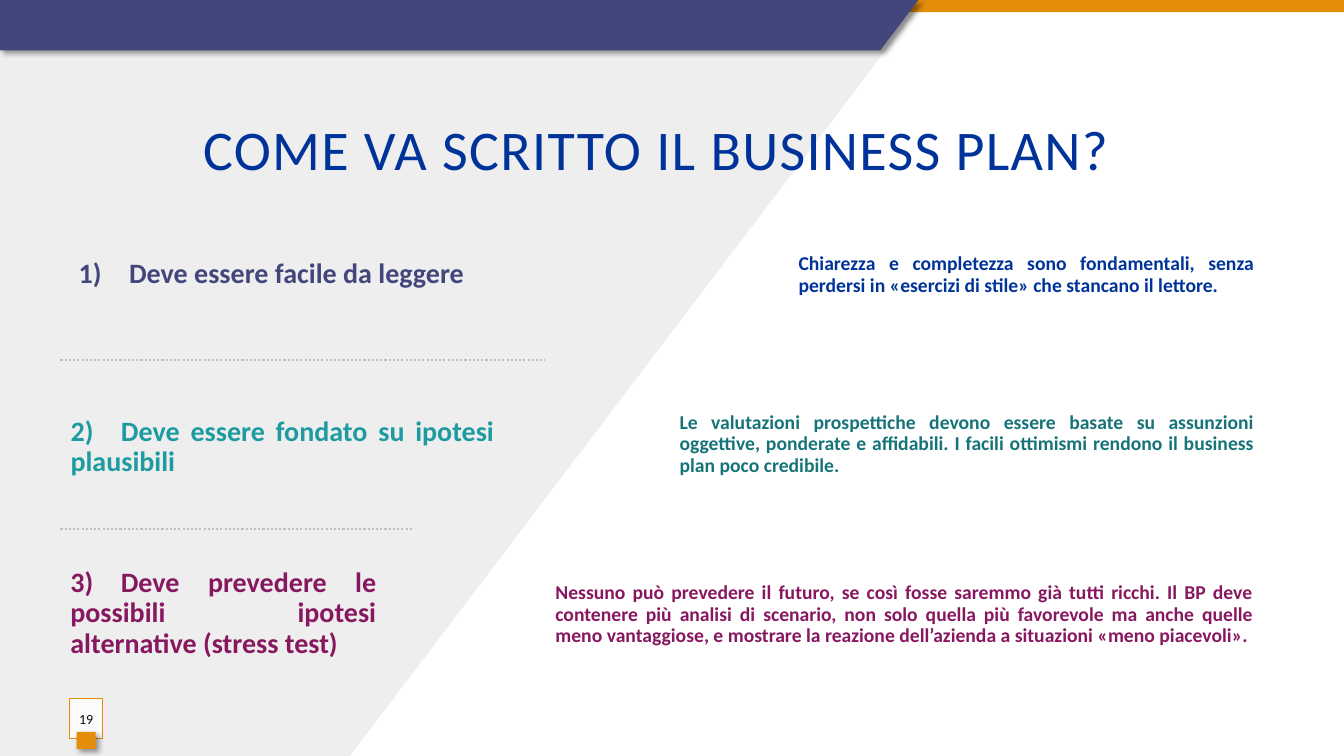
from lxml.etree import SubElement
from pptx import Presentation
from pptx.dml.color import RGBColor
from pptx.enum.dml import MSO_LINE
from pptx.enum.shapes import MSO_CONNECTOR, MSO_SHAPE
from pptx.enum.text import MSO_ANCHOR, MSO_AUTO_SIZE, PP_ALIGN
from pptx.oxml.ns import qn
from pptx.util import Pt

PX = 9144  # 100 px to the inch
FONT = "Calibri"
WHITE = RGBColor(0xFF, 0xFF, 0xFF)
PALE_GREY = RGBColor(0xEE, 0xEE, 0xEE)
DOT_GREY = RGBColor(0xBF, 0xBF, 0xBF)
INK = RGBColor(0x0D, 0x0D, 0x0D)
ORANGE = RGBColor(0xE5, 0x8C, 0x09)
INDIGO = RGBColor(0x43, 0x46, 0x7B)
BLUE = RGBColor(0x00, 0x33, 0x99)
TEAL = RGBColor(0x1D, 0x9B, 0xA1)
DARK_TEAL = RGBColor(0x16, 0x74, 0x79)
PLUM = RGBColor(0x87, 0x17, 0x5F)


def paint(shape, color, shadow=False):
    shape.fill.solid()
    shape.fill.fore_color.rgb = color
    shape.line.fill.background()
    shape.shadow.inherit = False
    if shadow:
        effects = shape._element.spPr.find(qn("a:effectLst"))
        outer = SubElement(effects, qn("a:outerShdw"), blurRad=str(Pt(4)),
                           dist=str(Pt(3)), dir="2700000", algn="tl", rotWithShape="0")
        black = SubElement(outer, qn("a:srgbClr"), val="000000")
        SubElement(black, qn("a:alpha"), val="40000")


def place(shape, left, top, width, height):
    shape.left, shape.top = left * PX, top * PX
    shape.width, shape.height = width * PX, height * PX


deck = Presentation()
deck.slide_width, deck.slide_height = 1333 * PX, 750 * PX
page = deck.slides.add_slide(deck.slide_layouts.get_by_name("Comparison"))
shapes = page.shapes
title, *bodies = page.placeholders

# Background: grey slope, orange strip, indigo banner
slope = shapes.build_freeform(0, 0, scale=PX)
slope.add_line_segments([(911, 0), (911, 7), (347, 750), (0, 750)])
paint(slope.convert_to_shape(), PALE_GREY)
strip = shapes.add_shape(MSO_SHAPE.RECTANGLE, 0, 0, 1333 * PX, 12 * PX)
paint(strip, ORANGE)
banner = shapes.build_freeform(0, 0, scale=PX)
banner.add_line_segments([(911, 0), (873, 50), (0, 50)])
paint(banner.convert_to_shape(), INDIGO, shadow=True)

# Bring the placeholders in front of the background
for holder in [title, *bodies]:
    shapes._spTree.append(holder._element)

# Title
place(title, 60, 108, 1182, 77)
frame = title.text_frame
frame.text = "COME VA SCRITTO IL BUSINESS PLAN?"
frame.auto_size = MSO_AUTO_SIZE.NONE
frame.vertical_anchor = MSO_ANCHOR.MIDDLE
frame.paragraphs[0].alignment = PP_ALIGN.CENTER
span = frame.paragraphs[0].runs[0]
span.font.name, span.font.size = FONT, Pt(40)
span.font.color.rgb = BLUE
span.font._element.set("spc", "100")

# Three points, each a heading and its explanation
texts = [
    ("1)\tDeve essere facile da leggere", (68, 249, 540, 46), 20, INDIGO),
    ("Chiarezza e completezza sono fondamentali, senza perdersi in «esercizi di stile» "
     "che stancano il lettore.", (782, 223, 472, 100), 14, BLUE),
    ("2)\tDeve essere fondato su ipotesi plausibili", (60, 421, 440, 46), 20, TEAL),
    ("Le valutazioni prospettiche devono essere basate su assunzioni oggettive, ponderate "
     "e affidabili. I facili ottimismi rendono il business plan poco credibile.",
     (664, 391, 590, 100), 14, DARK_TEAL),
    ("3)\tDeve prevedere le possibili ipotesi alternative (stress test)",
     (60, 586, 323, 46), 20, PLUM),
    ("Nessuno può prevedere il futuro, se così fosse saremmo già tutti ricchi. Il BP deve "
     "contenere più analisi di scenario, non solo quella più favorevole ma anche quelle "
     "meno vantaggiose, e mostrare la reazione dell’azienda a situazioni «meno piacevoli».",
     (541, 560, 712, 100), 14, PLUM),
]
while len(bodies) < len(texts):
    bodies.append(shapes.add_textbox(0, 0, PX, PX))
for box, (text, area, size, color) in zip(bodies, texts):
    place(box, *area)
    frame = box.text_frame
    frame.text = text
    frame.word_wrap = True
    frame.auto_size = MSO_AUTO_SIZE.NONE
    frame.vertical_anchor = MSO_ANCHOR.MIDDLE
    para = frame.paragraphs[0]
    para.alignment = PP_ALIGN.JUSTIFY
    para.line_spacing = 0.9
    para.space_before, para.space_after = Pt(12), Pt(2)
    props = para._p.get_or_add_pPr()
    props.set("marL", "0")
    props.set("indent", "0")
    SubElement(props, qn("a:buNone"))
    tabs = SubElement(props, qn("a:tabLst"))
    SubElement(tabs, qn("a:tab"), pos=str(100 * PX), algn="l")
    for span in para.runs:
        span.font.name, span.font.size, span.font.bold = FONT, Pt(size), True
        span.font.color.rgb = color

# Page number with its orange tab
number = shapes.add_shape(MSO_SHAPE.RECTANGLE, 69 * PX, 693 * PX, 33 * PX, 40 * PX)
paint(number, WHITE)
SubElement(number._element.spPr.find(".//" + qn("a:srgbClr")), qn("a:alpha"), val="82000")
number.line.color.rgb = ORANGE
number.line.width = Pt(0.75)
frame = number.text_frame
frame.text = "19"
frame.margin_left = frame.margin_right = 0
frame.vertical_anchor = MSO_ANCHOR.MIDDLE
frame.paragraphs[0].alignment = PP_ALIGN.CENTER
span = frame.paragraphs[0].runs[0]
span.font.name, span.font.size = FONT, Pt(10)
span.font.color.rgb = INK
tab = shapes.add_shape(MSO_SHAPE.RECTANGLE, 76 * PX, 726 * PX, 19 * PX, 17 * PX)
paint(tab, ORANGE, shadow=True)

# Dotted dividers
for right, y in [(540, 357), (410, 525)]:
    divider = shapes.add_connector(MSO_CONNECTOR.STRAIGHT, 60 * PX, y * PX, right * PX, y * PX)
    divider.line.color.rgb = DOT_GREY
    divider.line.width = Pt(1.5)
    divider.line.dash_style = MSO_LINE.ROUND_DOT
    SubElement(divider._element.spPr, qn("a:effectLst"))

deck.save("out.pptx")
